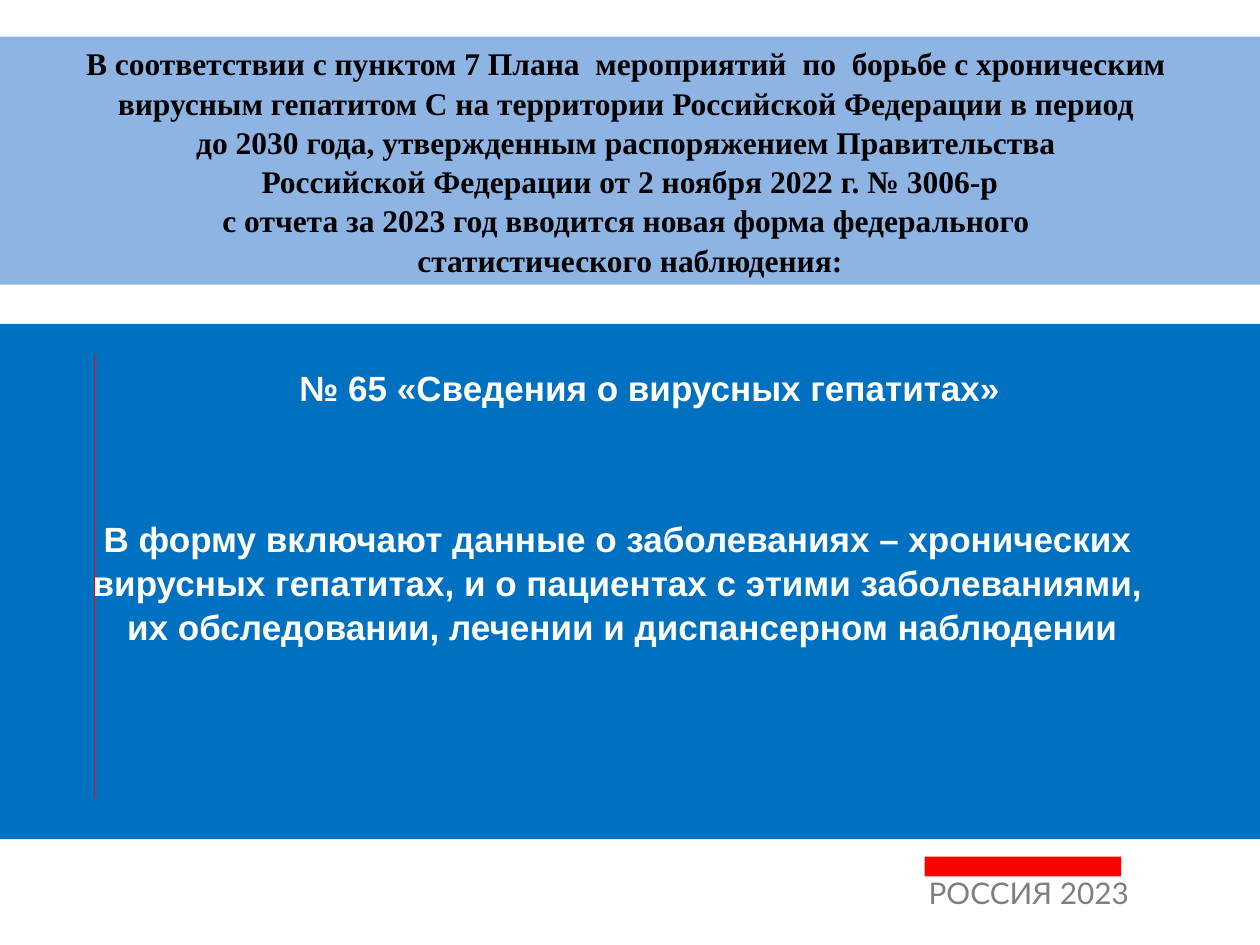
from lxml.etree import SubElement
from pptx import Presentation
from pptx.dml.color import RGBColor
from pptx.enum.shapes import MSO_CONNECTOR as Connector, MSO_SHAPE as Shape
from pptx.enum.text import MSO_ANCHOR as Anchor, PP_ALIGN as Align
from pptx.oxml.ns import qn
from pptx.util import Cm, Pt

# Content
HEADER = [
    "В соответствии с пунктом 7 Плана  мероприятий  по  борьбе с хроническим ",
    "вирусным гепатитом С на территории Российской Федерации в период ",
    "до 2030 года, утвержденным распоряжением Правительства ",
    "Российской Федерации от 2 ноября 2022 г. № 3006-р",
    "с отчета за 2023 год вводится новая форма федерального ",
    "статистического наблюдения:",
]
FORM_TITLE = ["№ 65 «Сведения о вирусных гепатитах»"]
FORM_SCOPE = [
    "В форму включают данные о заболеваниях – хронических ",
    "вирусных гепатитах, и о пациентах с этими заболеваниями, ",
    "их обследовании, лечении и диспансерном наблюдении",
]
FOOTER = ["РОССИЯ 2023"]

COLORS = {
    "panel": "0070C0",
    "header": "8EB4E3",
    "accent": "FF0000",
    "white": "FFFFFF",
    "black": "000000",
    "gray": "7F7F7F",
}

# Left, top, width, height in centimetres
PANEL = (-0.3, 6.53, 25.7, 10.39)
HEADER_BAND = (0, 0.74, 25.4, 5)
TITLE_BOX = (1.9, 6.53, 22.4, 2.54)
FOOTER_BOX = (18.47, 17.65, 4.78, 1.19)
FOOTER_BAR = (18.64, 17.27, 3.96, 0.4)
RULE_X, RULE_TOP, RULE_BOTTOM = 1.9, 7.13, 16.08


def color(name):
    return RGBColor.from_string(COLORS[name])


def add_band(slide, box, fill):
    shape = slide.shapes.add_shape(Shape.RECTANGLE, *map(Cm, box))
    shape.shadow.inherit = False
    shape.fill.solid()
    shape.fill.fore_color.rgb = color(fill)
    shape.line.fill.background()
    return shape


def write_text(shape, lines, *, font, size, fill, bold=False, align=Align.CENTER,
               anchor=Anchor.MIDDLE, spacing=1.04, before=0):
    frame = shape.text_frame
    frame.word_wrap = True
    frame.vertical_anchor = anchor
    for index, line in enumerate(lines):
        paragraph = frame.add_paragraph() if index else frame.paragraphs[0]
        paragraph.alignment = align
        paragraph.line_spacing = spacing
        paragraph.space_before = Pt(before)
        run = paragraph.add_run()
        run.text = line
        run.font.name = font
        run.font.size = Pt(size)
        run.font.bold = bold
        run.font.color.rgb = color(fill)


presentation = Presentation()
presentation.slide_width, presentation.slide_height = Cm(25.4), Cm(19.05)
slide = presentation.slides.add_slide(presentation.slide_layouts[6])

# Main panel and header band
write_text(add_band(slide, PANEL, "panel"), FORM_SCOPE,
           font="Arial", size=20, fill="white", bold=True)
write_text(add_band(slide, HEADER_BAND, "header"), HEADER,
           font="Times New Roman", size=18, fill="black", bold=True)

# Footer label with its bar
write_text(slide.shapes.add_textbox(*map(Cm, FOOTER_BOX)), FOOTER,
           font="Lato", size=17, fill="gray", align=Align.LEFT,
           anchor=Anchor.TOP, spacing=0.8, before=3.4)
add_band(slide, FOOTER_BAR, "accent")

# Vertical rule
rule = slide.shapes.add_connector(
    Connector.STRAIGHT, Cm(RULE_X), Cm(RULE_TOP), Cm(RULE_X), Cm(RULE_BOTTOM))
rule.line.color.rgb = color("accent")
rule.line.width = Pt(0.75)
SubElement(rule._element.spPr, qn("a:effectLst"))

# Form title
write_text(slide.shapes.add_textbox(*map(Cm, TITLE_BOX)), FORM_TITLE,
           font="Arial", size=20, fill="white", bold=True)

presentation.save("out.pptx")
